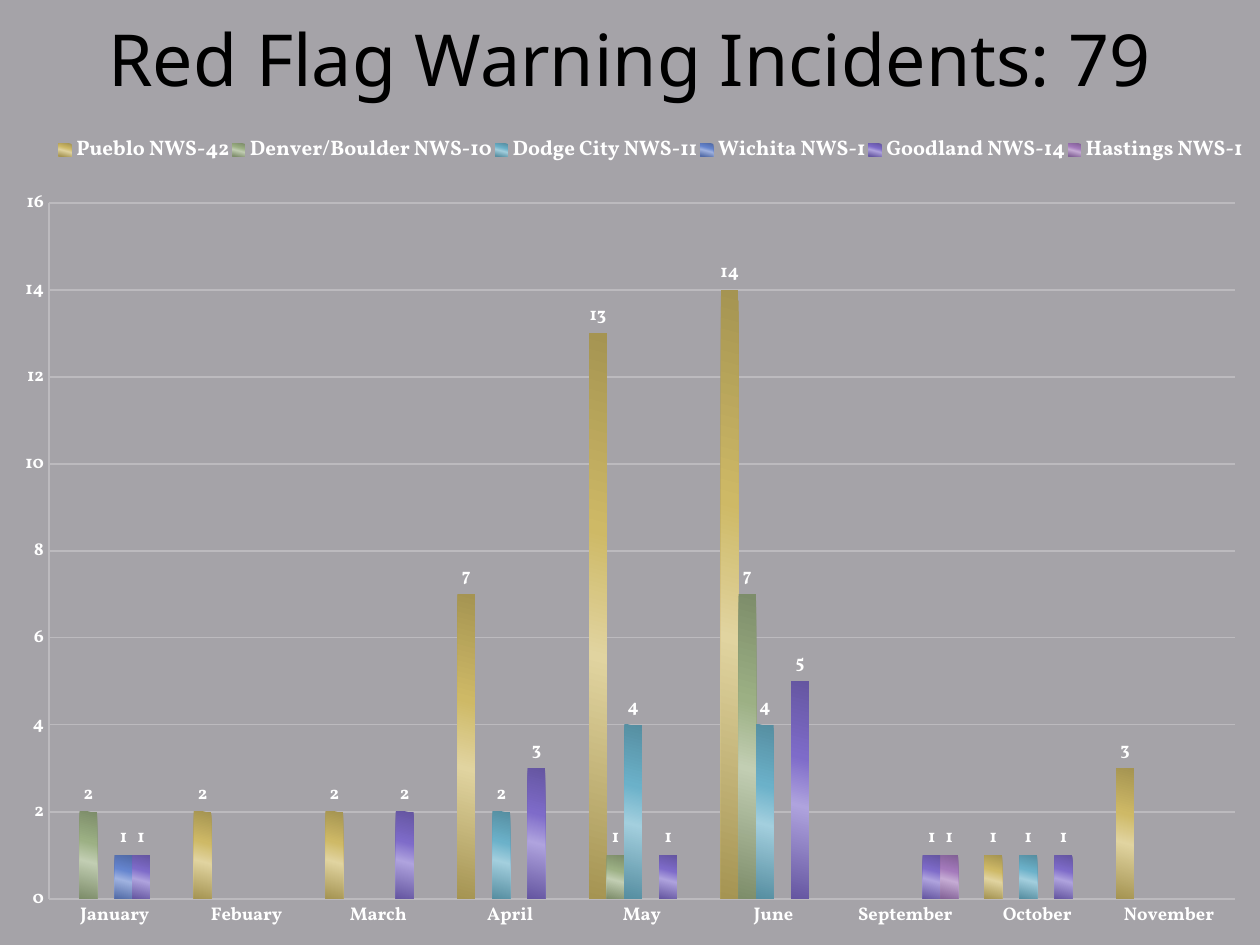
from lxml.etree import SubElement
from pptx import Presentation
from pptx.chart.data import CategoryChartData
from pptx.dml.color import RGBColor
from pptx.enum.chart import XL_CHART_TYPE, XL_LABEL_POSITION, XL_LEGEND_POSITION, XL_TICK_MARK
from pptx.enum.text import MSO_ANCHOR, PP_ALIGN
from pptx.oxml import parse_xml
from pptx.oxml.ns import nsdecls, qn
from pptx.util import Emu, Pt

BACKGROUND = RGBColor(0xA5, 0xA3, 0xA8)
GRID = RGBColor(0xBC, 0xBA, 0xBE)
WHITE = RGBColor(0xFF, 0xFF, 0xFF)
BLACK = RGBColor(0, 0, 0)
MONTHS = ["January", "Febuary", "March", "April", "May", "June",
          "September", "October", "November"]
OFFICES = [
    ("Pueblo NWS-42", RGBColor(0xCE, 0xB9, 0x66), [None, 2, 2, 7, 13, 14, None, 1, 3]),
    ("Denver/Boulder NWS-10", RGBColor(0x9C, 0xB0, 0x84),
     [2, None, None, None, 1, 7, None, None, None]),
    ("Dodge City NWS-11", RGBColor(0x6B, 0xB1, 0xC9),
     [None, None, None, 2, 4, 4, None, 1, None]),
    ("Wichita NWS-1", RGBColor(0x65, 0x85, 0xCF), [1] + [None] * 8),
    ("Goodland NWS-14", RGBColor(0x7E, 0x6B, 0xC9), [1, None, 2, 3, 1, 5, 1, 1, None]),
    ("Hastings NWS-1", RGBColor(0xA3, 0x79, 0xBB), [None] * 6 + [1, None, None]),
]


def px(n):
    """Turn pixels into EMU."""
    return Emu(round(n * 914400 / 126))


def mix(color, other, share):
    """Blend a share of another colour into a colour."""
    return RGBColor(*(round(a + (b - a) * share) for a, b in zip(color, other)))


def shade_bars(fmt, color):
    """Fill bars with a dark, light, dark sheen."""
    fmt.fill.solid()
    solid = fmt.fill._xPr.find(qn("a:solidFill"))
    dark, light = mix(color, BLACK, 0.2), mix(color, WHITE, 0.38)
    stops = "".join(f'<a:gs pos="{pos}"><a:srgbClr val="{c}"/></a:gs>' for pos, c in
                    ((0, dark), (35000, color), (57000, light), (100000, dark)))
    solid.getparent().replace(solid, parse_xml(
        f'<a:gradFill {nsdecls("a")} rotWithShape="1"><a:gsLst>{stops}</a:gsLst>'
        '<a:lin ang="6300000" scaled="0"/></a:gradFill>'))


def place(element, after, chart_box, box, inner=False):
    """Fix the place of a chart part inside the chart box."""
    for old in element.findall(qn("c:layout")):
        element.remove(old)
    layout = SubElement(element, qn("c:layout"))
    manual = SubElement(layout, qn("c:manualLayout"))
    if inner:
        SubElement(manual, qn("c:layoutTarget")).set("val", "inner")
    for mode in ("xMode", "yMode"):
        SubElement(manual, qn(f"c:{mode}")).set("val", "edge")
    for name, value, whole in zip("xywh", box, chart_box[2:] * 2):
        SubElement(manual, qn(f"c:{name}")).set("val", str(value / whole))
    if after is None:
        element.insert(0, layout)
    else:
        after.addnext(layout)


def add_title(s, box, text):
    """Set the slide title."""
    sp = s.shapes.title
    sp.left, sp.top, sp.width, sp.height = map(px, box)
    tf = sp.text_frame
    tf.vertical_anchor = MSO_ANCHOR.MIDDLE
    p = tf.paragraphs[0]
    p.alignment = PP_ALIGN.CENTER
    r = p.add_run()
    r.text = text
    r.font.size, r.font.name = Pt(41), "Noto Sans"
    r.font.color.rgb = BLACK


def add_incident_chart(s, box):
    """Draw warnings by month and office as clustered columns."""
    data = CategoryChartData()
    data.categories = MONTHS
    for name, _, values in OFFICES:
        data.add_series(name, values)
    chart = s.shapes.add_chart(XL_CHART_TYPE.COLUMN_CLUSTERED, *map(px, box), data).chart
    chart.has_title = False
    chart.font.name, chart.font.size, chart.font.bold = "Vollkorn", Pt(10.5), True
    chart.font.color.rgb = WHITE
    chart.has_legend = True
    legend = chart.legend
    legend.position = XL_LEGEND_POSITION.TOP
    legend.include_in_layout = False
    legend.font.name, legend.font.size, legend.font.bold = "Vollkorn", Pt(12), True
    legend.font.color.rgb = WHITE
    for axis in (chart.category_axis, chart.value_axis):
        axis.major_tick_mark = axis.minor_tick_mark = XL_TICK_MARK.NONE
        axis.format.line.color.rgb = GRID
        axis.format.line.width = Pt(0.75)
    axis.minimum_scale, axis.maximum_scale, axis.major_unit = 0, 16, 2
    axis.has_major_gridlines = True
    axis.major_gridlines.format.line.color.rgb = GRID
    axis.major_gridlines.format.line.width = Pt(0.75)
    plot = chart.plots[0]
    plot.gap_width, plot.overlap, plot.vary_by_categories = 150, 0, False
    for series, (_, color, _) in zip(plot.series, OFFICES):
        shade_bars(series.format, color)
        labels = series.data_labels
        labels.show_value = True
        labels.position = XL_LABEL_POSITION.OUTSIDE_END
    area = chart._chartSpace.find(".//" + qn("c:plotArea"))
    place(area, None, box, (49, 77, 1186, 696), inner=True)
    key = chart._chartSpace.find(".//" + qn("c:legend"))
    place(key, key.find(qn("c:legendPos")), box, (56, 6, 1190, 36))


def main():
    """Build the presentation."""
    prs = Presentation()
    prs.slide_width, prs.slide_height = px(1260), px(945)
    s = prs.slides.add_slide(prs.slide_layouts[5])
    s.background.fill.solid()
    s.background.fill.fore_color.rgb = BACKGROUND
    add_title(s, (0, 0, 1260, 116), "Red Flag Warning Incidents: 79")
    add_incident_chart(s, (0, 126, 1260, 819))
    prs.save("out.pptx")


if __name__ == "__main__":
    main()
